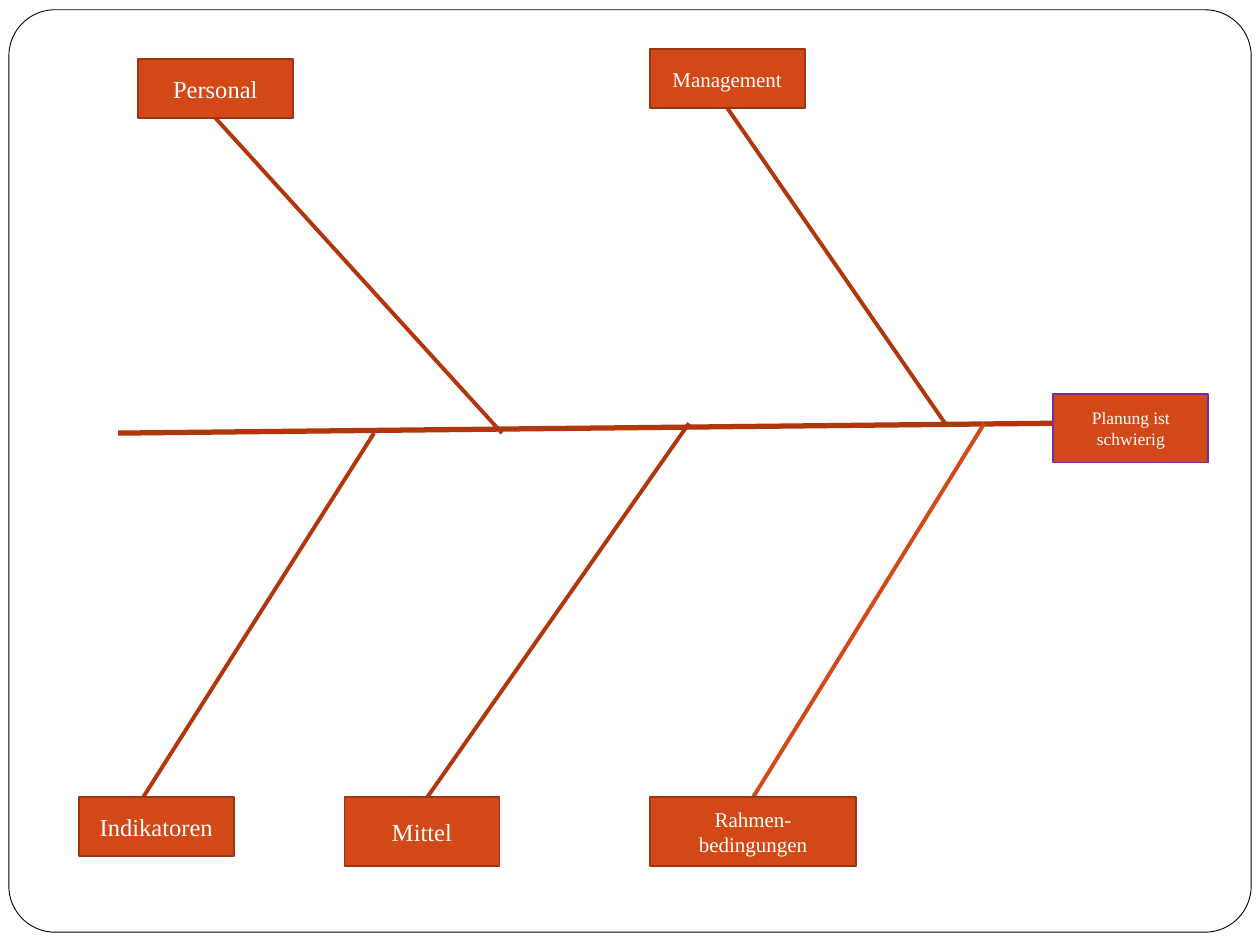
from lxml.etree import SubElement
from pptx import Presentation
from pptx.dml.color import RGBColor
from pptx.enum.shapes import MSO_CONNECTOR, MSO_SHAPE
from pptx.enum.text import MSO_ANCHOR, PP_ALIGN
from pptx.oxml.ns import qn
from pptx.util import Inches, Pt

COLORS = {
    "paper": "FFFFFF",
    "frame": "000000",
    "bone": "B1360B",
    "accent": "D34817",
    "edge": "9C3511",
    "effect": "7030A0",
}
FONT = "Times New Roman"
COLUMNS, ROWS = 128, 96
BOX_WIDTH = 15.75

# text, size, box (column, row, width, height), bone foot, bone joint, bone color
CAUSES = [
    ("Rahmen-\nbedingungen", 12, (66, 81, 21, 7), (76.5, 81), (100, 43), "accent"),
    ("Management", 12, (66, 5, BOX_WIDTH, 6), (73.9, 11), (96, 43), "bone"),
    ("Mittel", 14, (35, 81, BOX_WIDTH, 7), (42, 83), (70, 43), "bone"),
    ("Indikatoren", 14, (8, 81, BOX_WIDTH, 6), (12, 85), (38, 44), "bone"),
    ("Personal", 14, (14, 6, BOX_WIDTH, 6), (21.9, 12), (51, 44), "bone"),
]


def color(name):
    return RGBColor.from_string(COLORS[name])


def write(frame, text, size=14, ink="paper", align=PP_ALIGN.CENTER):
    frame.word_wrap = True
    frame.vertical_anchor = MSO_ANCHOR.MIDDLE
    for index, line in enumerate(text.split("\n")):
        para = frame.paragraphs[0] if index == 0 else frame.add_paragraph()
        para.alignment = align
        span = para.add_run()
        span.text = line
        span.font.name = FONT
        span.font.size = Pt(size)
        span.font.color.rgb = color(ink)


class Fishbone:
    def __init__(self, deck):
        self.page = deck.slides.add_slide(deck.slide_layouts[6])
        self.column = deck.slide_width / COLUMNS
        self.row = deck.slide_height / ROWS

    def place(self, column, row):
        return round(column * self.column), round(row * self.row)

    def shape(self, kind, area, fill, line, width):
        left, top, wide, high = area
        shape = self.page.shapes.add_shape(
            kind, *self.place(left, top), *self.place(wide, high))
        shape.shadow.inherit = False
        shape.fill.solid()
        shape.fill.fore_color.rgb = color(fill)
        shape.line.color.rgb = color(line)
        shape.line.width = Pt(width)
        return shape

    def frame(self, area):
        frame = self.shape(MSO_SHAPE.ROUNDED_RECTANGLE, area, "paper", "frame", 0.5)
        frame.adjustments[0] = 0.05

    def box(self, text, size, area, edge="edge"):
        box = self.shape(MSO_SHAPE.RECTANGLE, area, "accent", edge, 1)
        write(box.text_frame, text, size=size)

    def bone(self, start, end, ink="bone", width=2.25):
        bone = self.page.shapes.add_connector(
            MSO_CONNECTOR.STRAIGHT, *self.place(*start), *self.place(*end))
        bone.line.color.rgb = color(ink)
        bone.line.width = Pt(width)
        SubElement(bone.element.spPr, qn("a:effectLst"))


def main():
    deck = Presentation()
    deck.slide_width, deck.slide_height = Inches(10), Inches(7.5)
    diagram = Fishbone(deck)

    # Rounded page frame
    diagram.frame((0.9, 1, 126.2, 93.7))

    # Spine and effect
    diagram.bone((12, 44), (107, 43), width=3)
    diagram.box("Planung ist schwierig", 10, (107, 40, BOX_WIDTH, 7), edge="effect")

    # Bones first, so that the cause boxes cover their feet
    for _, _, _, foot, joint, ink in CAUSES:
        diagram.bone(foot, joint, ink)
    for text, size, area, *_ in CAUSES:
        diagram.box(text, size, area)

    deck.save("out.pptx")


if __name__ == "__main__":
    main()
